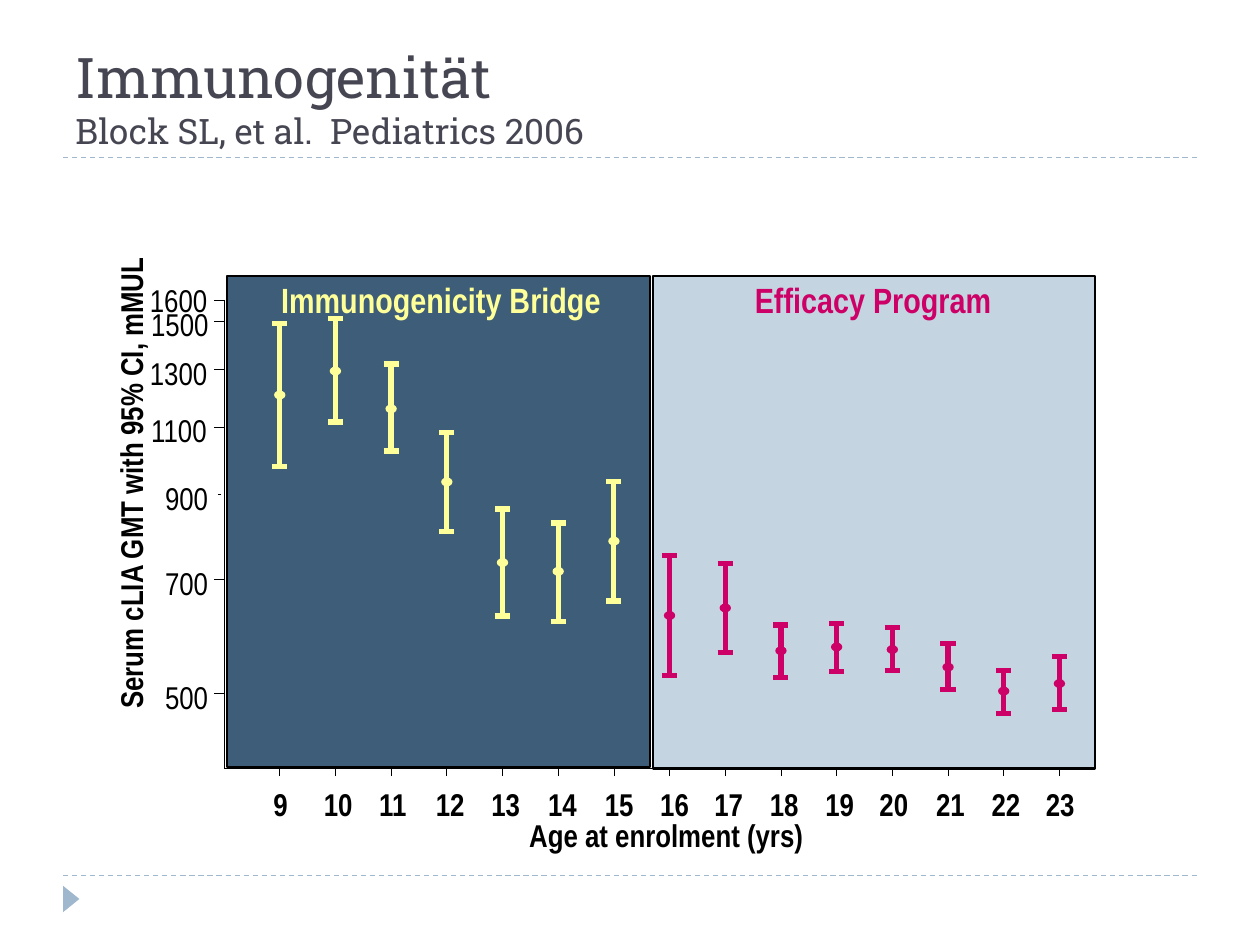
from dataclasses import dataclass

from lxml.etree import SubElement
from pptx import Presentation
from pptx.dml.color import RGBColor
from pptx.enum.dml import MSO_LINE
from pptx.enum.shapes import MSO_CONNECTOR, MSO_SHAPE
from pptx.enum.text import MSO_ANCHOR as Anchor, MSO_AUTO_SIZE as AutoSize, PP_ALIGN as Align
from pptx.oxml.ns import qn
from pptx.util import Inches, Pt

COLORS = {
    "black": "000000",
    "title": "464653",
    "accent": "9FB8CD",
    "bridge_panel": "3E5D78",
    "efficacy_panel": "C5D4E1",
    "bridge": "FFFF99",
    "efficacy": "CC0066",
}
NARROW = "Arial Narrow"
TITLE_FONT = "Roboto Slab"
FIRST_TICK, AGE_STEP = 2.22, 0.442
AXIS_LEFT, AXIS_RIGHT, AXIS_TOP, AXIS_BOTTOM = 1.78, 8.63, 2.38, 6.1
THIN, THICK = 0.38, 3
CAP_HALF = 0.06
DOT_WIDTH, DOT_HEIGHT = 0.09, 0.07


@dataclass(frozen=True)
class Panel:
    """A study panel with its heading."""
    heading: str
    left: float
    width: float
    height: float
    heading_left: float
    fill: str
    color: str


@dataclass(frozen=True)
class AgeGroup:
    """Mean and confidence limits for one age, as heights on the slide."""
    age: int
    label_left: float
    lower: float
    upper: float
    mean: float
    color: str = "bridge"


@dataclass(frozen=True)
class TiterTick:
    """One tick of the titer axis with its label."""
    label: str
    y: float
    label_left: float
    label_top: float
    start: float = 1.7
    end: float = AXIS_LEFT


PANELS = [
    Panel("Immunogenicity Bridge", 1.8, 3.36, 3.9, 1.68, "bridge_panel", "bridge"),
    Panel("Efficacy Program", 5.18, 3.51, 3.91, 5.11, "efficacy_panel", "efficacy"),
]
AGE_GROUPS = [
    AgeGroup(9, 2.17, 3.7, 2.57, 3.1),
    AgeGroup(10, 2.57, 3.35, 2.53, 2.91),
    AgeGroup(11, 3.01, 3.58, 2.89, 3.21),
    AgeGroup(12, 3.46, 4.22, 3.43, 3.79),
    AgeGroup(13, 3.9, 4.89, 4.04, 4.43),
    AgeGroup(14, 4.35, 4.93, 4.15, 4.5),
    AgeGroup(15, 4.8, 4.77, 3.82, 4.26),
    AgeGroup(16, 5.24, 5.36, 4.41, 4.85, "efficacy"),
    AgeGroup(17, 5.67, 5.18, 4.47, 4.79, "efficacy"),
    AgeGroup(18, 6.11, 5.38, 4.96, 5.13, "efficacy"),
    AgeGroup(19, 6.55, 5.33, 4.95, 5.1, "efficacy"),
    AgeGroup(20, 6.98, 5.32, 4.98, 5.12, "efficacy"),
    AgeGroup(21, 7.43, 5.47, 5.11, 5.26, "efficacy"),
    AgeGroup(22, 7.87, 5.66, 5.32, 5.45, "efficacy"),
    AgeGroup(23, 8.3, 5.63, 5.21, 5.39, "efficacy"),
]
TITER_TICKS = [
    TiterTick("500", 5.5, 1.31, 5.38),
    TiterTick("700", 4.6, 1.31, 4.48),
    TiterTick("900", 3.92, 1.31, 3.8, 1.73, 1.75),
    TiterTick("1100", 3.39, 1.2, 3.26),
    TiterTick("1300", 2.93, 1.19, 2.81),
    TiterTick("1500", 2.55, 1.2, 2.42),
    TiterTick("1600", 2.38, 1.19, 2.23),
]


def rgb(name: str) -> RGBColor:
    """Return the named colour."""
    return RGBColor.from_string(COLORS[name])


def add_line(slide, x1: float, y1: float, x2: float, y2: float, color: str, width: float):
    """Draw a straight line without a shadow."""
    line = slide.shapes.add_connector(
        MSO_CONNECTOR.STRAIGHT, Inches(x1), Inches(y1), Inches(x2), Inches(y2))
    line.line.color.rgb = rgb(color)
    line.line.width = Pt(width)
    SubElement(line._element.spPr, qn("a:effectLst"))
    return line


def add_filled(slide, kind, left: float, top: float, width: float, height: float, fill: str):
    """Draw a filled preset shape without outline or shadow."""
    shape = slide.shapes.add_shape(kind, Inches(left), Inches(top), Inches(width), Inches(height))
    shape.shadow.inherit = False
    shape.fill.solid()
    shape.fill.fore_color.rgb = rgb(fill)
    shape.line.fill.background()
    return shape


def add_run(paragraph, text: str, size: float, font: str, color: str, bold: bool = False) -> None:
    """Append one formatted run."""
    run = paragraph.add_run()
    run.text = text
    run.font.size = Pt(size)
    run.font.name = font
    run.font.bold = bold
    run.font.color.rgb = rgb(color)


def add_text_box(slide, left: float, top: float, width: float, height: float):
    """Add an empty wrapping text box."""
    box = slide.shapes.add_textbox(Inches(left), Inches(top), Inches(width), Inches(height))
    box.text_frame.word_wrap = True
    return box


def add_label(slide, text: str, left: float, top: float, width: float, bold: bool = True):
    """Add a one-line axis label without margins."""
    box = add_text_box(slide, left, top, width, 0.3)
    frame = box.text_frame
    frame.margin_left = frame.margin_top = frame.margin_right = frame.margin_bottom = 0
    frame.word_wrap = False
    frame.auto_size = AutoSize.SHAPE_TO_FIT_TEXT
    add_run(frame.paragraphs[0], text, 18, NARROW, "black", bold)
    return box


def draw_frame(slide) -> None:
    """Draw the title, the dashed rules and the corner triangle."""
    for y in (6.95, 1.25):
        add_line(slide, 0.5, y, 9.5, y, "accent", 0.75).line.dash_style = MSO_LINE.DASH
    add_filled(slide, MSO_SHAPE.ISOSCELES_TRIANGLE, 0.46, 7.07, 0.21, 0.13, "accent").rotation = 90
    frame = add_text_box(slide, 0.5, 0.25, 9, 1).text_frame
    frame.vertical_anchor = Anchor.BOTTOM
    paragraph = frame.paragraphs[0]
    add_run(paragraph, "Immunogenität", 32, TITLE_FONT, "title")
    paragraph.add_line_break()
    add_run(paragraph, "Block SL, et al.  Pediatrics 2006", 20, TITLE_FONT, "title")


def draw_panel(slide, panel: Panel) -> None:
    """Draw a panel and its heading."""
    shape = add_filled(slide, MSO_SHAPE.RECTANGLE, panel.left, 2.19, panel.width, panel.height, panel.fill)
    shape.line.color.rgb = rgb("black")
    shape.line.width = Pt(1.25)
    frame = add_text_box(slide, panel.heading_left, 2.16, 3.64, 0.44).text_frame
    paragraph = frame.paragraphs[0]
    paragraph.alignment = Align.CENTER
    add_run(paragraph, panel.heading, 20, NARROW, panel.color, True)


def draw_titer_tick(slide, tick: TiterTick) -> None:
    """Draw a titer tick and its label."""
    add_line(slide, tick.start, tick.y, tick.end, tick.y, "black", THIN)
    width = 0.35 if len(tick.label) == 3 else 0.46
    add_label(slide, tick.label, tick.label_left, tick.label_top, width, False)


def draw_age_group(slide, index: int, group: AgeGroup) -> None:
    """Draw the tick, label, error bar and mean of one age."""
    x = FIRST_TICK + index * AGE_STEP
    add_line(slide, x, AXIS_BOTTOM + 0.06, x, AXIS_BOTTOM, "black", THIN)
    add_label(slide, str(group.age), group.label_left, 6.23, 0.12 if group.age < 10 else 0.23)
    add_line(slide, x, group.lower, x, group.upper, group.color, THICK)
    for y in (group.lower, group.upper):
        add_line(slide, x - CAP_HALF, y, x + CAP_HALF, y, group.color, THICK)
    add_filled(slide, MSO_SHAPE.OVAL, x - DOT_WIDTH / 2, group.mean, DOT_WIDTH, DOT_HEIGHT, group.color)


def main() -> None:
    """Build the slide and save it."""
    presentation = Presentation()
    presentation.slide_width, presentation.slide_height = Inches(10), Inches(7.5)
    slide = presentation.slides.add_slide(presentation.slide_layouts[6])
    draw_frame(slide)
    for panel in PANELS:
        draw_panel(slide, panel)
    add_line(slide, AXIS_LEFT, AXIS_BOTTOM, AXIS_RIGHT, AXIS_BOTTOM, "black", THIN)
    add_line(slide, AXIS_LEFT, AXIS_TOP, AXIS_LEFT, AXIS_BOTTOM, "black", THIN)
    for tick in TITER_TICKS:
        draw_titer_tick(slide, tick)
    for index, group in enumerate(AGE_GROUPS):
        draw_age_group(slide, index, group)
    add_label(slide, "Age at enrolment (yrs)", 4.2, 6.48, 2.2)
    add_label(slide, "Serum cLIA GMT with 95% CI, mMUL", -0.77, 3.67, 3.61).rotation = 270
    presentation.save("out.pptx")


if __name__ == "__main__":
    main()
